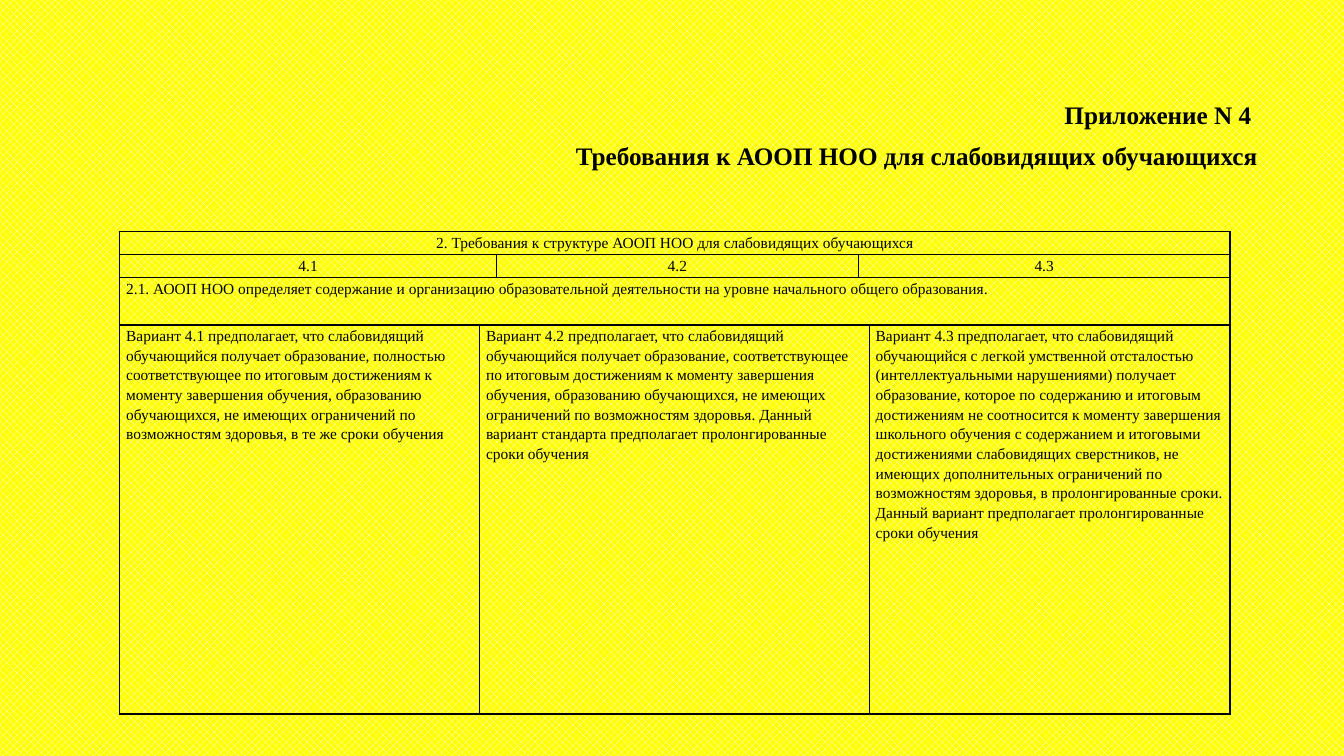
import pptx
import pptx.dml.color
import pptx.enum.dml
import pptx.enum.text
import pptx.oxml
import pptx.oxml.ns
import pptx.util

Cm = pptx.util.Cm
Pt = pptx.util.Pt
ALIGN = pptx.enum.text.PP_ALIGN
BLACK = pptx.dml.color.RGBColor(0, 0, 0)
WHITE = pptx.dml.color.RGBColor(255, 255, 255)
YELLOW = pptx.dml.color.RGBColor(255, 255, 0)

HEADING = ["Приложение N 4 ", "Требования к АООП НОО для слабовидящих обучающихся"]
COLUMNS = [9.07, 0.28, 9.12, 0.28, 9.09]
ROWS = [0.58, 0.58, 1.19, 9.8]
CELLS = [
    (0, 0, 5, ALIGN.CENTER, "2. Требования к структуре АООП НОО для слабовидящих обучающихся"),
    (1, 0, 2, ALIGN.CENTER, "4.1"),
    (1, 2, 1, ALIGN.CENTER, "4.2"),
    (1, 3, 2, ALIGN.CENTER, "4.3"),
    (2, 0, 5, ALIGN.LEFT,
     "2.1. АООП НОО определяет содержание и организацию образовательной "
     "деятельности на уровне начального общего образования."),
    (3, 0, 1, ALIGN.LEFT,
     "Вариант 4.1 предполагает, что слабовидящий обучающийся получает образование, "
     "полностью соответствующее по итоговым достижениям к моменту завершения обучения, "
     "образованию обучающихся, не имеющих ограничений по возможностям здоровья, "
     "в те же сроки обучения"),
    (3, 1, 3, ALIGN.LEFT,
     "Вариант 4.2 предполагает, что слабовидящий обучающийся получает образование, "
     "соответствующее по итоговым достижениям к моменту завершения обучения, "
     "образованию обучающихся, не имеющих ограничений по возможностям здоровья. "
     "Данный вариант стандарта предполагает пролонгированные сроки обучения"),
    (3, 4, 1, ALIGN.LEFT,
     "Вариант 4.3 предполагает, что слабовидящий обучающийся с легкой умственной "
     "отсталостью (интеллектуальными нарушениями) получает образование, которое по "
     "содержанию и итоговым достижениям не соотносится к моменту завершения школьного "
     "обучения с содержанием и итоговыми достижениями слабовидящих сверстников, не "
     "имеющих дополнительных ограничений по возможностям здоровья, в пролонгированные "
     "сроки. Данный вариант предполагает пролонгированные сроки обучения"),
]


def apply(target, values):
    """Set every attribute in values on the target."""
    for name, value in values.items():
        setattr(target, name, value)


class Page:
    """Hold the text style and the current slide."""

    def __init__(self, deck):
        """Add a title-only slide to the deck."""
        self.slide = deck.slides.add_slide(deck.slide_layouts[5])
        self.font = {"name": "Times New Roman", "bold": False}

    def background(self, front, back):
        """Fill the page with a two-colour pattern."""
        fill = self.slide.background.fill
        fill.patterned()
        fill.pattern = pptx.enum.dml.MSO_PATTERN.PERCENT_50
        fill.fore_color.rgb = front
        fill.back_color.rgb = back

    def text(self, para, words, size, layout, **font):
        """Put formatted words in a paragraph."""
        apply(para, layout)
        span = para.add_run()
        span.text = words
        apply(span.font, {**self.font, "size": Pt(size), **font})
        span.font.color.rgb = BLACK

    def title(self, lines, left, top, width, height):
        """Move the title placeholder and fill it."""
        box = self.slide.shapes.title
        apply(box, {"left": Cm(left), "top": Cm(top), "width": Cm(width), "height": Cm(height)})
        frame = box.text_frame
        apply(frame, {"word_wrap": True,
                      "auto_size": pptx.enum.text.MSO_AUTO_SIZE.NONE,
                      "vertical_anchor": pptx.enum.text.MSO_ANCHOR.TOP})
        for index, line in enumerate(lines):
            para = frame.add_paragraph() if index else frame.paragraphs[0]
            layout = {"alignment": ALIGN.RIGHT, "line_spacing": 0.9,
                      "space_before": Pt(10 if index else 0)}
            self.text(para, line, 18, layout, bold=True)

    def border(self, cell):
        """Draw a thin black line on each side of a cell."""
        properties = cell._tc.get_or_add_tcPr()
        for position, side in enumerate(("lnL", "lnR", "lnT", "lnB")):
            line = pptx.oxml.parse_xml(
                f'<a:{side} {pptx.oxml.ns.nsdecls("a")} w="12700"><a:solidFill>'
                f'<a:srgbClr val="{BLACK}"/></a:solidFill></a:{side}>')
            properties.insert(position, line)

    def table(self, cells, columns, rows, left, top):
        """Add a bordered table with merged cells."""
        table = self.slide.shapes.add_table(
            len(rows), len(columns), Cm(left), Cm(top), Cm(sum(columns)), Cm(sum(rows))).table
        apply(table, {"first_row": False, "horz_banding": False})
        for column, width in zip(table.columns, columns):
            column.width = Cm(width)
        for row, height in zip(table.rows, rows):
            row.height = Cm(height)
        for cell in table.iter_cells():
            apply(cell, {"margin_left": Cm(0.16), "margin_right": Cm(0.16),
                         "margin_top": 0, "margin_bottom": 0})
            cell.fill.background()
            self.border(cell)
            cell.text_frame.paragraphs[0].font.size = Pt(11)
        for row, column, width, alignment, words in cells:
            cell = table.cell(row, column)
            if width > 1:
                cell.merge(table.cell(row, column + width - 1))
            self.text(cell.text_frame.paragraphs[0], words, 11,
                      {"alignment": alignment, "line_spacing": 1.15})


def main():
    """Build and save the deck."""
    deck = pptx.Presentation()
    apply(deck, {"slide_width": Cm(33.87), "slide_height": Cm(19.05)})
    page = Page(deck)
    page.background(WHITE, YELLOW)
    page.title(HEADING, 1.9, 2.46, 30.05, 2.4)
    page.table(CELLS, COLUMNS, ROWS, 3.02, 5.84)
    deck.save("out.pptx")


if __name__ == "__main__":
    main()
